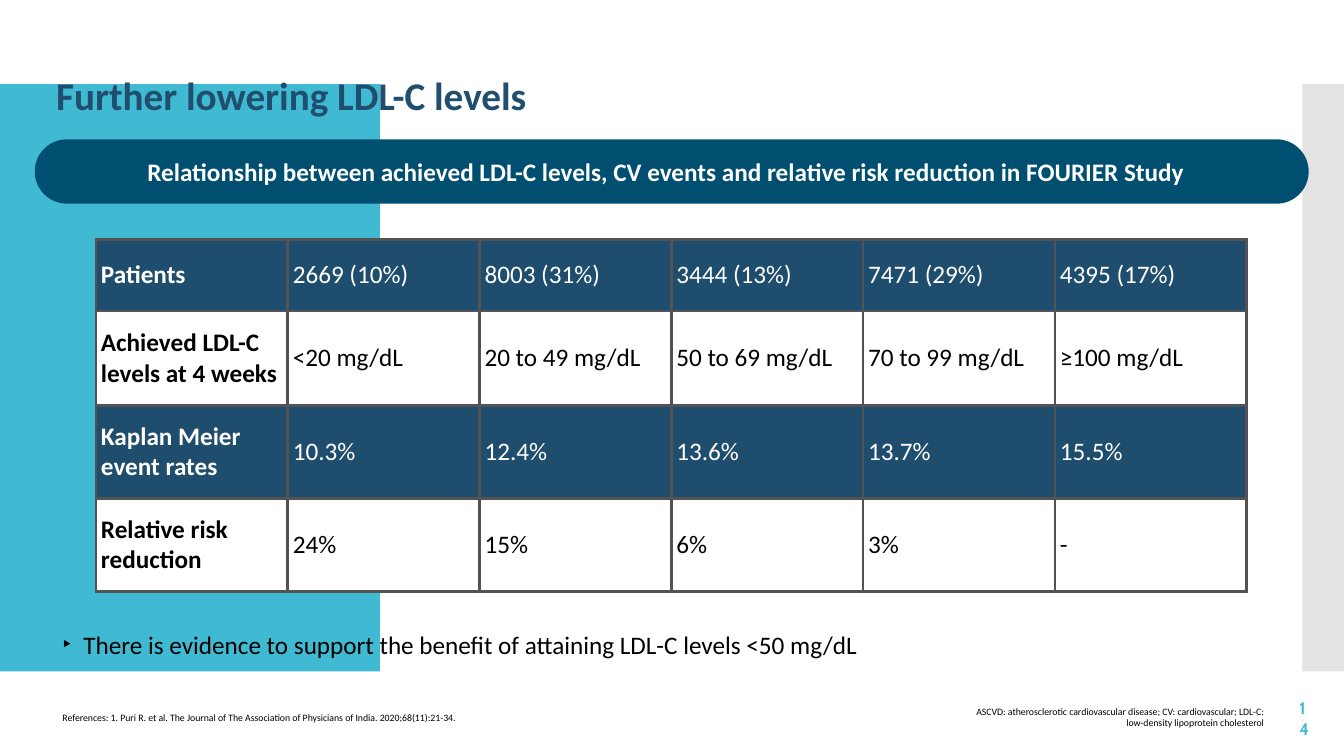
from lxml.etree import SubElement as Sub
from pptx import Presentation as Deck
from pptx.dml.color import RGBColor as Rgb
from pptx.enum.shapes import MSO_SHAPE as Shape
from pptx.enum.text import MSO_ANCHOR as Anchor, MSO_AUTO_SIZE as Fit, PP_ALIGN as Align
from pptx.oxml import parse_xml as read_xml
from pptx.oxml.ns import nsdecls, qn
from pptx.util import Pt

HUES = {
    "teal": "40BAD2", "grey": "C8C8C8", "title": "204E6E", "pill": "004F71",
    "band": "1F4D6D", "edge": "535353", "white": "FFFFFF", "black": "000000",
}
ROWS = [
    ["Patients", "2669 (10%)", "8003 (31%)", "3444 (13%)", "7471 (29%)", "4395 (17%)"],
    ["Achieved LDL-C levels at 4 weeks", "<20 mg/dL", "20 to 49 mg/dL",
     "50 to 69 mg/dL", "70 to 99 mg/dL", "≥100 mg/dL"],
    ["Kaplan Meier event rates", "10.3%", "12.4%", "13.6%", "13.7%", "15.5%"],
    ["Relative risk reduction", "24%", "15%", "6%", "3%", "-"],
]
TALL = [51, 67.5, 66.5, 66.5]
WIDE = 137


def hue(name):
    return Rgb.from_string(HUES[name])


def place(shape, box):
    shape.left, shape.top, shape.width, shape.height = map(Pt, box)


def add_run(para, text, size, tint, bold=False, face="Calibri"):
    run = para.add_run()
    run.text = text
    font = run.font
    font.name, font.size, font.bold = face, Pt(size), bold
    font.color.rgb = hue(tint)


def set_frame(frame, inset=3.6, wrap=True, anchor=Anchor.MIDDLE):
    frame.auto_size = Fit.NONE
    frame.word_wrap = wrap
    frame.vertical_anchor = anchor
    frame.margin_left = frame.margin_right = Pt(inset)
    frame.margin_top = frame.margin_bottom = Pt(3.6)


def add_label(slide, box, text, size, tint, align=Align.LEFT, bold=False,
              face="Calibri", inset=3.6, wrap=True):
    frame = slide.shapes.add_textbox(*map(Pt, box)).text_frame
    set_frame(frame, inset, wrap)
    para = frame.paragraphs[0]
    para.alignment = align
    add_run(para, text, size, tint, bold, face)


def add_block(slide, kind, box, tint):
    block = slide.shapes.add_shape(kind, *map(Pt, box))
    block.shadow.inherit = False
    block.fill.solid()
    block.fill.fore_color.rgb = hue(tint)
    block.line.fill.background()
    return block


def add_panels(slide):
    teal = add_block(slide, Shape.RECTANGLE, (0, 60, 271.3, 419.5), "teal")
    grey = add_block(slide, Shape.RECTANGLE, (930.3, 60, 29.7, 419.5), "grey")
    tint = grey.fill._xPr.find(qn("a:solidFill"))[0]
    Sub(tint, qn("a:alpha"), val="50000")
    tree = slide.shapes._spTree
    for spot, panel in enumerate((teal, grey), 2):
        tree.insert(spot, panel._element)


def set_title(slide):
    title = slide.shapes.title
    place(title, (36.5, 50.5, 791, 35))
    set_frame(title.text_frame)
    para = title.text_frame.paragraphs[0]
    para.alignment = Align.LEFT
    add_run(para, "Further lowering LDL-C levels", 28, "title", True)


def set_body(slide):
    body = slide.placeholders[1]
    place(body, (41, 448, 577, 26))
    set_frame(body.text_frame, wrap=False, anchor=Anchor.TOP)
    para = body.text_frame.paragraphs[0]
    props = para._p.get_or_add_pPr()
    props.set("marL", str(Pt(15)))
    props.set("indent", str(Pt(-15)))
    Sub(props, qn("a:buChar"), char="‣")
    para.line_spacing = 0.9
    para.space_before = Pt(0)
    para.alignment = Align.LEFT
    add_run(para, "There is evidence to support the benefit of attaining LDL-C levels <50 mg/dL",
            18, "black")


def add_edges(cell):
    props = cell._tc.get_or_add_tcPr()
    for spot, side in enumerate(("lnL", "lnR", "lnT", "lnB")):
        props.insert(spot, read_xml(
            f'<a:{side} {nsdecls("a")} w="{Pt(2)}"><a:solidFill>'
            f'<a:srgbClr val="{HUES["edge"]}"/></a:solidFill></a:{side}>'))


def fill_cell(cell, text, back, tint, bold):
    cell.fill.solid()
    cell.fill.fore_color.rgb = hue(back)
    cell.vertical_anchor = Anchor.MIDDLE
    cell.margin_left = cell.margin_right = Pt(3.6)
    cell.margin_top = cell.margin_bottom = Pt(3.6)
    add_run(cell.text_frame.paragraphs[0], text, 18, tint, bold)
    add_edges(cell)


def add_grid(slide):
    count = len(ROWS[0])
    box = (68.5, 171, WIDE * count, sum(TALL))
    table = slide.shapes.add_table(len(ROWS), count, *map(Pt, box)).table
    table.first_row = table.horz_banding = False
    for col in table.columns:
        col.width = Pt(WIDE)
    for r, (texts, tall) in enumerate(zip(ROWS, TALL)):
        table.rows[r].height = Pt(tall)
        back, tint = ("white", "black") if r % 2 else ("band", "white")
        for c, text in enumerate(texts):
            fill_cell(table.cell(r, c), text, back, tint, c == 0)


def main():
    deck = Deck()
    deck.slide_width, deck.slide_height = Pt(960), Pt(540)
    slide = deck.slides.add_slide(deck.slide_layouts[1])
    add_panels(slide)
    set_title(slide)
    add_label(slide, (921, 502.5, 18, 21), "14", 12, "teal", Align.RIGHT, True, "Cabin", 7.2)
    add_label(slide, (41, 505.5, 300, 14.5),
              "References: 1. Puri R. et al. The Journal of The Association of Physicians "
              "of India. 2020;68(11):21-34.", 7, "black")
    add_label(slide, (682, 500.5, 224.5, 23.5),
              "ASCVD: atherosclerotic cardiovascular disease; CV: cardiovascular; LDL-C: "
              "low-density lipoprotein cholesterol", 7, "black", Align.RIGHT)
    pill = add_block(slide, Shape.ROUNDED_RECTANGLE, (24.8, 99.5, 910, 46), "pill")
    pill.adjustments[0] = 0.5
    add_label(slide, (98.5, 109.5, 754.5, 26),
              "Relationship between achieved LDL-C levels, CV events and relative risk "
              "reduction in FOURIER Study", 18, "white", Align.CENTER, True, wrap=False)
    set_body(slide)
    add_grid(slide)
    deck.save("out.pptx")


if __name__ == "__main__":
    main()
